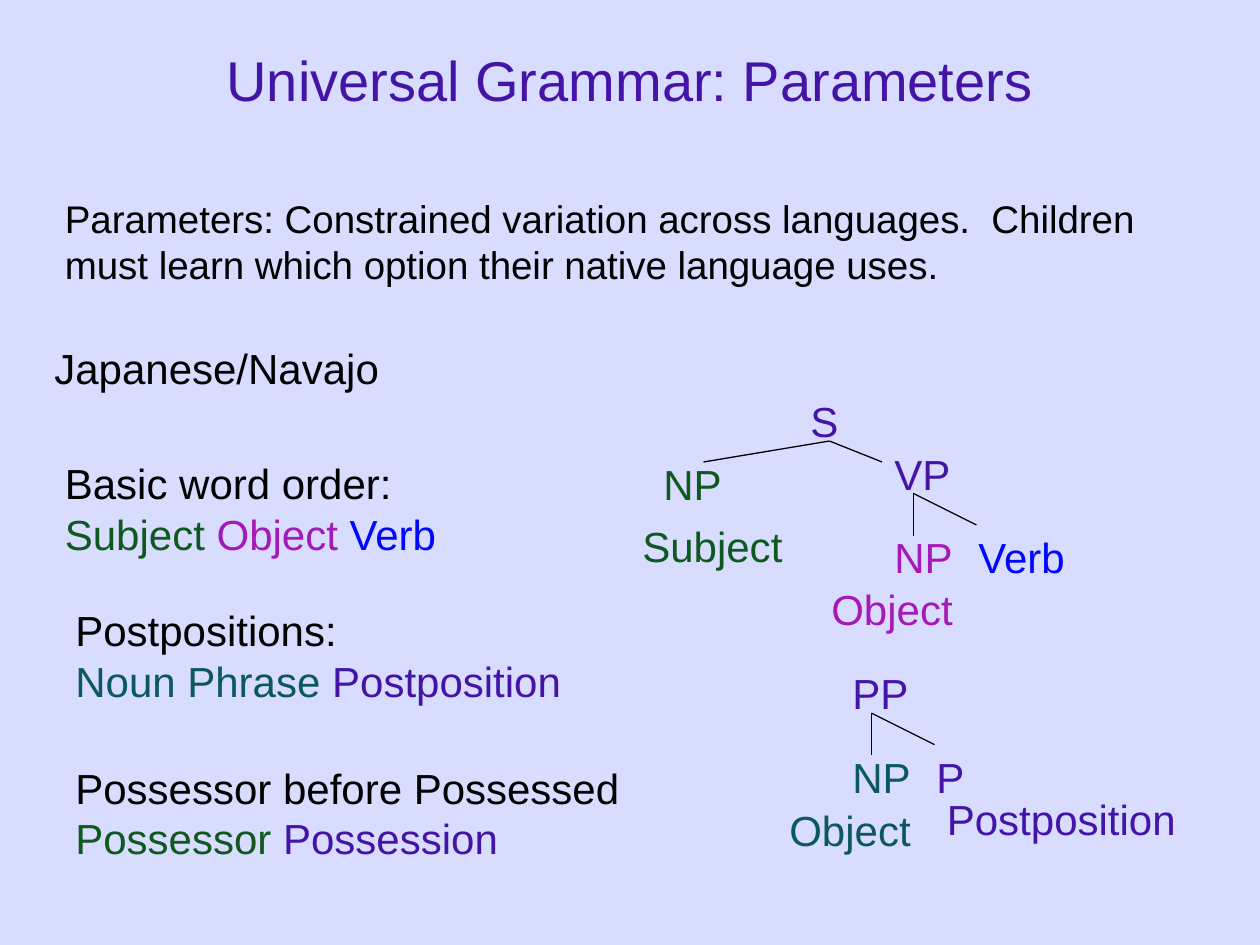
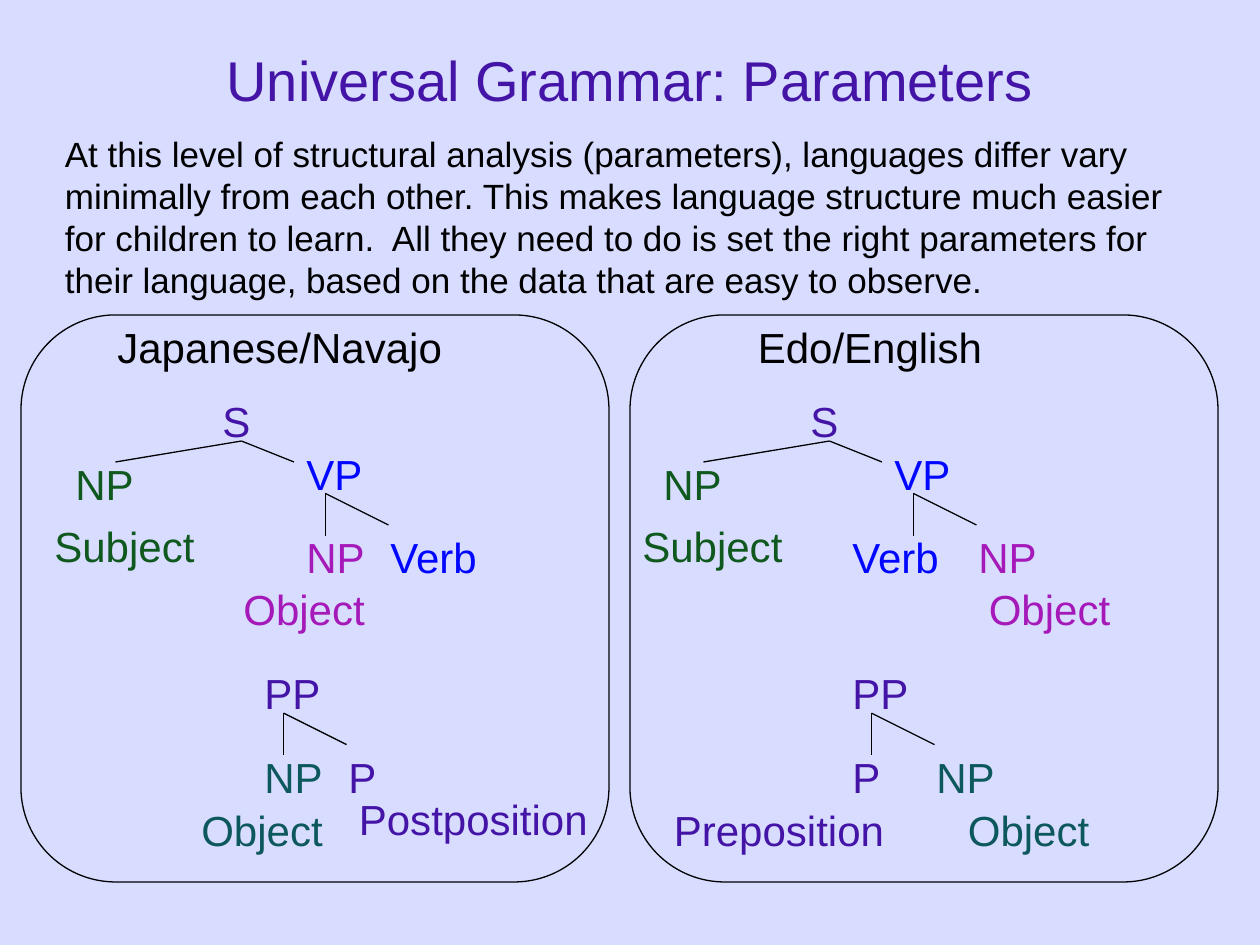
import pptx
import pptx.dml.color
import pptx.enum.shapes
import pptx.enum.text
import pptx.oxml.ns
import pptx.util
from lxml import etree

Pt = pptx.util.Pt

COLOURS = {
    "background": "D8DCFF",
    "violet": "4414A7",
    "black": "000000",
    "green": "0F591E",
    "magenta": "A519B9",
    "blue": "0006FF",
    "teal": "0D585D",
}
TITLE = "Universal Grammar: Parameters"
LEFT_TREE, RIGHT_TREE = 24, 360

# Tree nodes: label, colour, x from the tree's left edge, y, width
SHARED_NODES = [
    ("S", "violet", 96, 222.5, 30),
    ("NP", "green", 12, 258.5, 47.5),
    ("Subject", "green", 0, 294, 186),
    ("PP", "violet", 120, 378, 47),
]
HEAD_LAST_NODES = [
    ("NP", "magenta", 144, 300, 47.5),
    ("Verb", "blue", 192, 300, 78),
    ("Object", "magenta", 108, 330, 102),
    ("NP", "teal", 120, 426, 47.5),
    ("P", "violet", 168, 426, 78),
    ("Object", "teal", 84, 456, 102),
    ("Postposition", "violet", 174, 450, 168),
]
HEAD_FIRST_NODES = [
    ("Verb", "blue", 120, 300, 78),
    ("NP", "magenta", 192, 300, 47.5),
    ("Object", "magenta", 198, 330, 102),
    ("P", "violet", 120, 426, 30),
    ("NP", "teal", 168, 426, 78),
    ("Object", "teal", 186, 456, 102),
    ("Preposition", "violet", 18, 456, 168),
]
# Branches: parent point, then the points of its two children
BRANCHES = [
    ((114, 252), (144, 264), (42, 264)),
    ((162, 282), (162, 306), (198, 300)),
    ((138, 407.5), (138, 431.5), (174, 425.5)),
]


def rgb(colour):
    return pptx.dml.color.RGBColor.from_string(COLOURS[colour])


class GrammarDeck:
    def __init__(self):
        self.prs = pptx.Presentation()
        self.prs.slide_width, self.prs.slide_height = Pt(720), Pt(540)
        fill = self.prs.slide_master.background.fill
        fill.solid()
        fill.fore_color.rgb = rgb("background")
        self.slide = None

    def new_slide(self, title):
        self.slide = self.prs.slides.add_slide(self.prs.slide_layouts[6])
        self.text(0, 0, 720, 90, [[(title, "violet")]], size=32,
                  align=pptx.enum.text.PP_ALIGN.CENTER,
                  anchor=pptx.enum.text.MSO_ANCHOR.MIDDLE)

    def text(self, x, y, width, height, lines, size=24, wrap=True,
             align=pptx.enum.text.PP_ALIGN.LEFT,
             anchor=pptx.enum.text.MSO_ANCHOR.TOP):
        """Each line is a list of (words, colour) runs."""
        box = self.slide.shapes.add_textbox(Pt(x), Pt(y), Pt(width), Pt(height))
        frame = box.text_frame
        for name, value in {"word_wrap": wrap, "vertical_anchor": anchor}.items():
            setattr(frame, name, value)
        for index, runs in enumerate(lines):
            paragraph = frame.add_paragraph() if index else frame.paragraphs[0]
            paragraph.alignment = align
            for words, colour in runs:
                run = paragraph.add_run()
                run.text = words
                for name, value in {"name": "Arial", "size": Pt(size)}.items():
                    setattr(run.font, name, value)
                run.font.color.rgb = rgb(colour)

    def branch(self, start, end):
        line = self.slide.shapes.add_connector(
            pptx.enum.shapes.MSO_CONNECTOR.STRAIGHT,
            *(Pt(length) for length in (*start, *end)))
        self.outline(line)
        etree.SubElement(line._element.spPr, pptx.oxml.ns.qn("a:effectLst"))

    def panel(self, x, y, width, height):
        frame = self.slide.shapes.add_shape(
            pptx.enum.shapes.MSO_SHAPE.ROUNDED_RECTANGLE,
            Pt(x), Pt(y), Pt(width), Pt(height))
        frame.adjustments[0] = 0.167
        frame.fill.background()
        frame.shadow.inherit = False
        self.outline(frame)

    def outline(self, shape):
        shape.line.color.rgb = rgb("black")
        shape.line.width = Pt(0.75)

    def tree(self, left, order_nodes, vp_colour):
        verb_phrase = ("VP", vp_colour, 144, 252.5, 47)
        for label, colour, x, y, width in [*SHARED_NODES, verb_phrase, *order_nodes]:
            self.text(left + x, y, width, 36, [[(label, colour)]], wrap=width > 50)
        for (x, y), *children in BRANCHES:
            for child_x, child_y in children:
                self.branch((left + x, y), (left + child_x, child_y))


def main():
    deck = GrammarDeck()

    # Slide 1: the settings of one language type
    deck.new_slide(TITLE)
    deck.text(30, 108, 660, 60, [[(
        "Parameters: Constrained variation across languages.  Children must "
        "learn which option their native language uses.", "black")]], size=22)
    deck.text(24, 192, 252, 36, [[("Japanese/Navajo", "black")]])
    settings = [
        (30, 258, 234, "Basic word order:",
         [("Subject ", "green"), ("Object ", "magenta"), ("Verb", "blue")]),
        (36, 342, 318, "Postpositions:",
         [("Noun Phrase ", "teal"), ("Postposition", "violet")]),
        (36, 432, 330, "Possessor before Possessed",
         [("Possessor ", "green"), ("Possession", "violet")]),
    ]
    for x, y, width, heading, order in settings:
        deck.text(x, y, width, 65, [[(heading, "black")], order])
    deck.tree(RIGHT_TREE, HEAD_LAST_NODES, "violet")

    # Slide 2: two language types side by side
    deck.new_slide(TITLE)
    deck.text(30, 72, 660, 103, [[(
        "At this level of structural analysis (parameters), languages differ "
        "vary minimally from each other. This makes language structure much "
        "easier for children to learn.  All they need to do is set the right "
        "parameters for their language, based on the data that are easy to "
        "observe.", "black")]], size=20)
    comparison = [
        (12, LEFT_TREE, HEAD_LAST_NODES, "Japanese/Navajo", 60, 246),
        (360, RIGHT_TREE, HEAD_FIRST_NODES, "Edo/English", 426, 144),
    ]
    for panel_x, tree_x, nodes, languages, heading_x, heading_width in comparison:
        deck.panel(panel_x, 180, 336, 324)
        deck.text(heading_x, 180, heading_width, 36, [[(languages, "black")]])
        deck.tree(tree_x, nodes, "blue")

    deck.prs.save("out.pptx")


if __name__ == "__main__":
    main()
